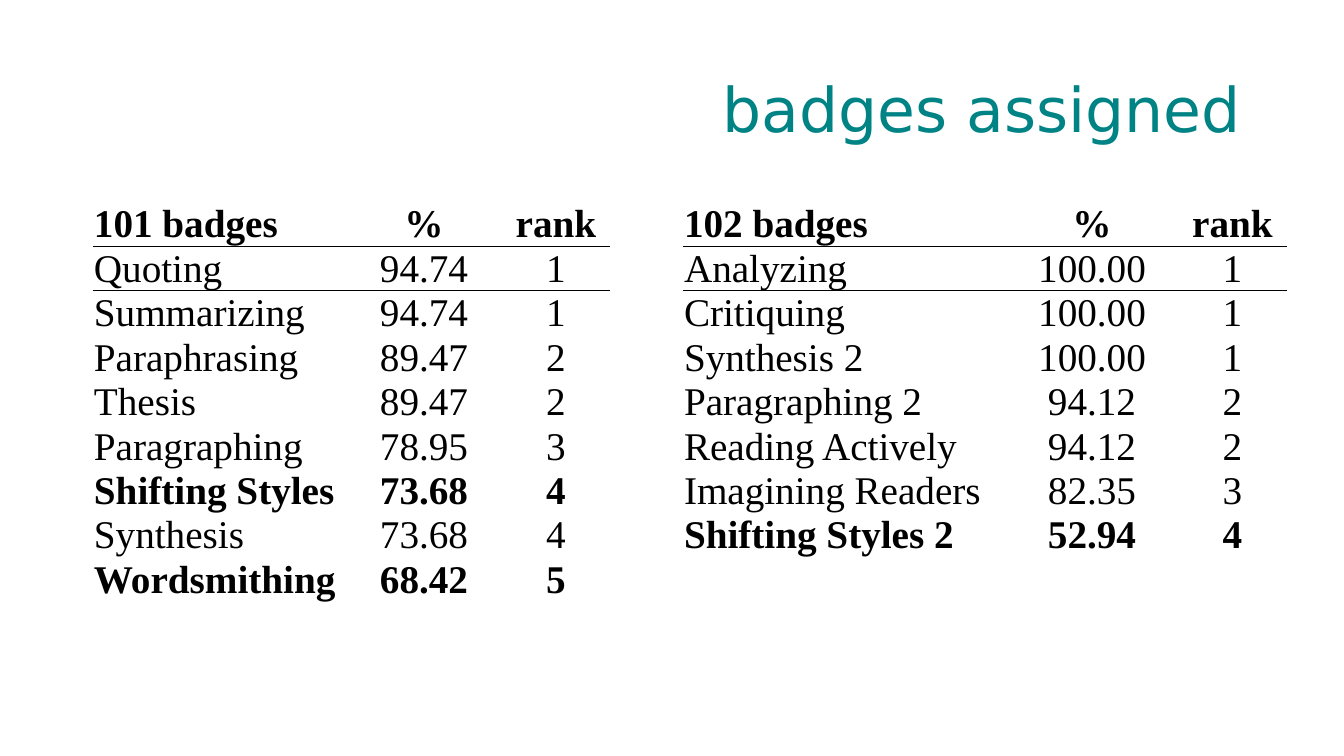
from pptx import Presentation
from pptx.dml.color import RGBColor as RGB
from pptx.enum.text import MSO_ANCHOR as Anchor, MSO_AUTO_SIZE as Fit, PP_ALIGN as Align
from pptx.oxml import parse_xml
from pptx.oxml.ns import qn
from pptx.util import Pt

THEME = {
    "teal": "008385", "ink": "000000",
    "head": "DejaVu Sans", "body": "Times New Roman",
    "title": 44, "cell": 28,
}
PLAIN = "{2D5ABB26-0587-4C30-8999-92F81FD0307C}"  # no style, no grid
A_NS = "http://schemas.openxmlformats.org/drawingml/2006/main"
ROW = 41
TOP = 202


def px(n):
    return round(n * 914400 / 100.8)


def style(par, face, size, color, align, bold=False):
    par.alignment = align
    font = par.font
    font.name, font.size, font.bold = face, Pt(size), bold
    font.color.rgb = RGB.from_string(color)


# Each table: left edge, column widths, rows, bold rows
tables = [
    (93, [253, 156, 108], [
        ("101 badges", "%", "rank"),
        ("Quoting", "94.74", "1"),
        ("Summarizing", "94.74", "1"),
        ("Paraphrasing", "89.47", "2"),
        ("Thesis", "89.47", "2"),
        ("Paragraphing", "78.95", "3"),
        ("Shifting Styles", "73.68", "4"),
        ("Synthesis", "73.68", "4"),
        ("Wordsmithing", "68.42", "5"),
    ], {0, 6, 8}),
    (683, [323, 172, 109], [
        ("102 badges", "%", "rank"),
        ("Analyzing", "100.00", "1"),
        ("Critiquing", "100.00", "1"),
        ("Synthesis 2", "100.00", "1"),
        ("Paragraphing 2", "94.12", "2"),
        ("Reading Actively", "94.12", "2"),
        ("Imagining Readers", "82.35", "3"),
        ("Shifting Styles 2", "52.94", "4"),
    ], {0, 7}),
]
rules = {0: ["lnB"], 1: ["lnT", "lnB"]}

deck = Presentation()
deck.slide_width, deck.slide_height = px(1344), px(756)
slide = deck.slides.add_slide(deck.slide_layouts[5])

title = slide.shapes.title
title.left, title.top, title.width, title.height = map(px, (93, 40, 1159, 146))
frame = title.text_frame
frame.text = "badges assigned"
frame.auto_size = Fit.NONE
frame.vertical_anchor = Anchor.MIDDLE
head = frame.paragraphs[0]
head.line_spacing = 0.9
style(head, THEME["head"], THEME["title"], THEME["teal"], Align.RIGHT)

for left, widths, rows, strong in tables:
    box = slide.shapes.add_table(len(rows), len(widths), px(left), px(TOP),
                                 px(sum(widths)), px(ROW * len(rows)))
    grid = box.table
    grid.first_row = grid.horz_banding = False
    box._element.find(".//" + qn("a:tableStyleId")).text = PLAIN
    for col, width in zip(grid.columns, widths):
        col.width = px(width)
    for r, row in enumerate(rows):
        for c, text in enumerate(row):
            cell = grid.cell(r, c)
            cell.text = text
            cell.vertical_anchor = Anchor.BOTTOM
            cell.margin_left = cell.margin_right = cell.margin_top = px(1)
            cell.margin_bottom = 0
            style(cell.text_frame.paragraphs[0], THEME["body"], THEME["cell"],
                  THEME["ink"], Align.CENTER if c else Align.LEFT, r in strong)
            for side in rules.get(r, []):
                cell._tc.get_or_add_tcPr().append(parse_xml(
                    f'<a:{side} xmlns:a="{A_NS}" w="{Pt(1)}"><a:solidFill>'
                    f'<a:srgbClr val="{THEME["ink"]}"/></a:solidFill></a:{side}>'))
            cell.fill.background()
    for line in grid.rows:
        line.height = px(ROW)

deck.save("out.pptx")
